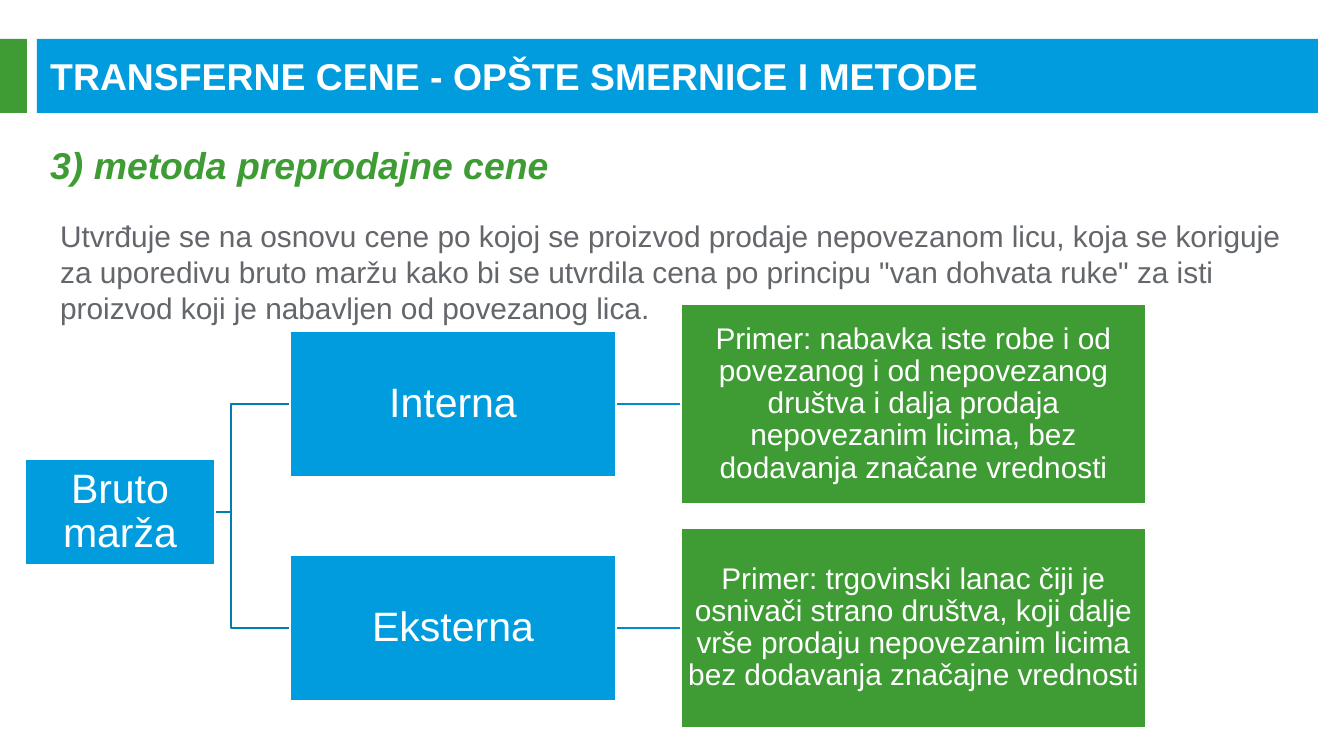
"""Slide on the resale price method, with a gross margin tree."""
from lxml import etree
from pptx import Presentation
from pptx.dml.color import RGBColor
from pptx.enum.shapes import MSO_CONNECTOR, MSO_SHAPE
from pptx.enum.text import MSO_ANCHOR, PP_ALIGN
from pptx.oxml.ns import qn
from pptx.util import Pt

RECTANGLE = MSO_SHAPE.RECTANGLE
STRAIGHT, ELBOW = MSO_CONNECTOR.STRAIGHT, MSO_CONNECTOR.ELBOW
TOP, MIDDLE = MSO_ANCHOR.TOP, MSO_ANCHOR.MIDDLE
LEFT, CENTER = PP_ALIGN.LEFT, PP_ALIGN.CENTER

COLORS = {
    "blue": "009CDE", "green": "3F9C35", "white": "FFFFFF",
    "gray": "63666A", "trunk": "007DB2", "branch": "008EC9",
}
TITLE = "TRANSFERNE CENE - OPŠTE SMERNICE I METODE"
SUBTITLE = "3) metoda preprodajne cene"
DESCRIPTION = (
    "Utvrđuje se na osnovu cene po kojoj se proizvod prodaje nepovezanom licu, "
    "koja se koriguje za uporedivu bruto maržu kako bi se utvrdila cena po principu "
    '"van dohvata ruke" za isti proizvod koji je nabavljen od povezanog lica.'
)
ROOT = "Bruto marža"
BRANCHES = [
    ("Interna",
     "Primer: nabavka iste robe i od povezanog i od nepovezanog društva i dalja "
     "prodaja nepovezanim licima, bez dodavanja značane vrednosti"),
    ("Eksterna",
     "Primer: trgovinski lanac čiji je osnivači strano društva, koji dalje vrše "
     "prodaju nepovezanim licima bez dodavanja značajne vrednosti"),
]

SCALE = 914400 / 134.4
ROOT_LEFT, ROOT_WIDTH, ROOT_HEIGHT, ROOT_CENTER = 25, 190, 105, 512
KIND_LEFT, KIND_WIDTH, KIND_HEIGHT = 290, 326, 146
EXAMPLE_LEFT, EXAMPLE_WIDTH, EXAMPLE_HEIGHT = 681, 465, 199
FIRST_CENTER, ROW_STEP = 404, 224
TRUNK_LEFT = 172
LINE_WIDTH = Pt(0.85)


def emu(*pixels):
    return [round(value * SCALE) for value in pixels]


def color(name):
    return RGBColor.from_string(COLORS[name])


def write(shape, text, size=16, ink="white", bold=False, italic=False,
          align=LEFT, anchor=TOP, margin=None, spacing=None):
    frame = shape.text_frame
    frame.word_wrap = True
    frame.vertical_anchor = anchor
    if margin is not None:
        frame.margin_left = frame.margin_right = emu(margin)[0]
        frame.margin_top = frame.margin_bottom = emu(margin)[0]
    paragraph = frame.paragraphs[0]
    paragraph.alignment = align
    if spacing:
        paragraph.line_spacing = spacing
    span = paragraph.add_run()
    span.text = text
    span.font.name = "Arial"
    span.font.size = Pt(size)
    span.font.bold = bold
    span.font.italic = italic
    span.font.color.rgb = color(ink)


def add_box(page, left, top, width, height, fill, outline=None):
    box = page.shapes.add_shape(RECTANGLE, *emu(left, top, width, height))
    box.shadow.inherit = False
    box.fill.solid()
    box.fill.fore_color.rgb = color(fill)
    if outline:
        box.line.color.rgb = color(outline)
        box.line.width = LINE_WIDTH
    else:
        box.line.fill.background()
    return box


def add_node(page, text, left, center, width, height, fill="blue", size=22, margin=2):
    box = add_box(page, left, center - height / 2, width, height, fill, "white")
    write(box, text, size=size, align=CENTER, anchor=MIDDLE, margin=margin, spacing=0.9)


def add_link(page, kind, start, end, ink):
    link = page.shapes.add_connector(kind, *emu(*start, *end))
    link.line.color.rgb = color(ink)
    link.line.width = LINE_WIDTH
    etree.SubElement(link._element.spPr, qn("a:effectLst"))


def add_tree(page):
    centers = [FIRST_CENTER + row * ROW_STEP for row in range(len(BRANCHES))]
    for center in centers:
        add_link(page, ELBOW, (TRUNK_LEFT, ROOT_CENTER), (KIND_LEFT, center), "trunk")
        add_link(page, STRAIGHT, (KIND_LEFT + KIND_WIDTH, center),
                 (EXAMPLE_LEFT, center), "branch")
    add_node(page, ROOT, ROOT_LEFT, ROOT_CENTER, ROOT_WIDTH, ROOT_HEIGHT)
    for center, (kind, example) in zip(centers, BRANCHES):
        add_node(page, kind, KIND_LEFT, center, KIND_WIDTH, KIND_HEIGHT)
        add_node(page, example, EXAMPLE_LEFT, center, EXAMPLE_WIDTH, EXAMPLE_HEIGHT,
                 fill="green", size=16, margin=1)


def main():
    deck = Presentation()
    deck.slide_width, deck.slide_height = emu(1344, 756)
    page = deck.slides.add_slide(deck.slide_layouts[6])

    title_bar = add_box(page, 37, 39, 1281, 74, "blue")
    write(title_bar, TITLE, size=20, bold=True, anchor=MIDDLE)
    add_box(page, 0, 39, 27, 74, "green")
    subtitle = page.shapes.add_textbox(*emu(37, 136, 1281, 71))
    write(subtitle, SUBTITLE, size=20, ink="green", bold=True, italic=True)
    description = page.shapes.add_textbox(*emu(47, 211, 1251, 122))
    write(description, DESCRIPTION, ink="gray")
    add_tree(page)

    deck.save("out.pptx")


if __name__ == "__main__":
    main()
